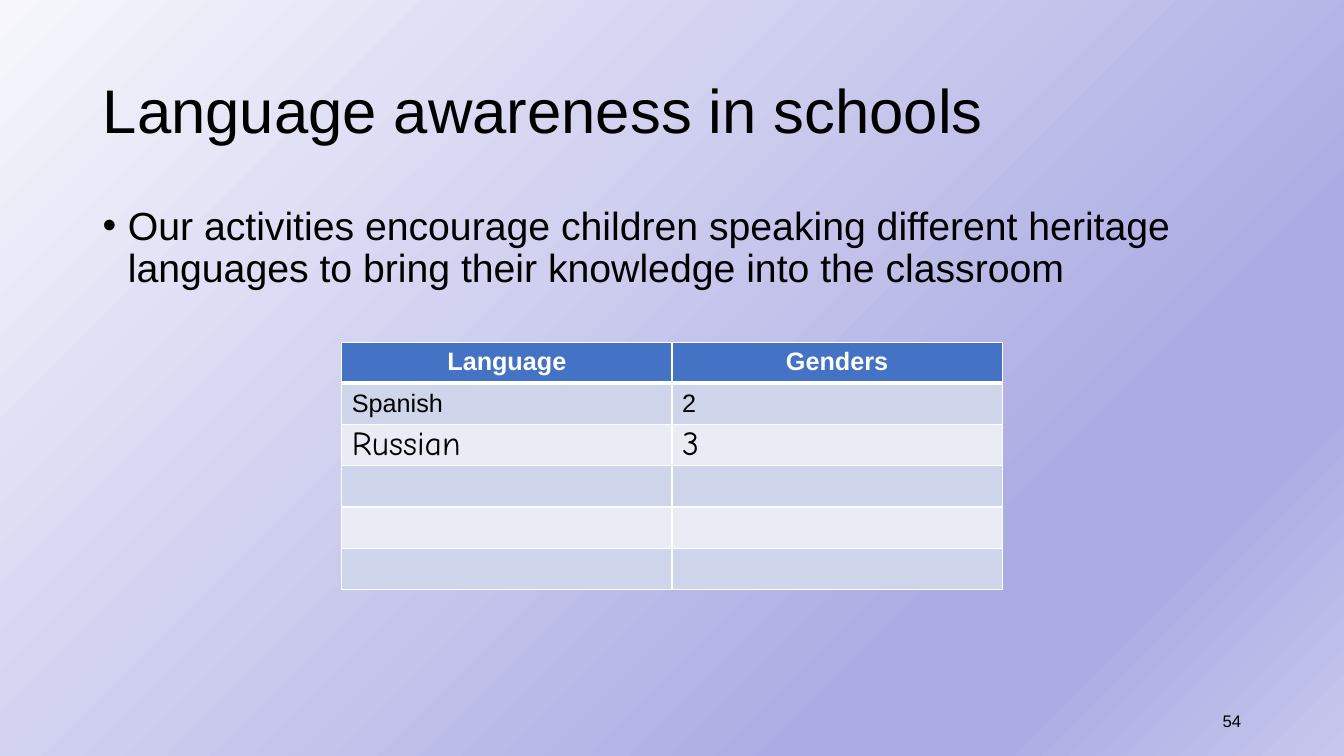
import lxml.etree
import pptx
import pptx.dml.color
import pptx.enum.text
import pptx.oxml.ns
import pptx.util

Inches, Pt = pptx.util.Inches, pptx.util.Pt
RGBColor = pptx.dml.color.RGBColor
Align, Anchor = pptx.enum.text.PP_ALIGN, pptx.enum.text.MSO_ANCHOR
qn = pptx.oxml.ns.qn

BLACK = RGBColor(0x00, 0x00, 0x00)
WHITE = RGBColor(0xFF, 0xFF, 0xFF)
HEADER_BLUE = RGBColor(0x44, 0x72, 0xC4)
BANDS = RGBColor(0xCF, 0xD5, 0xEA), RGBColor(0xE9, 0xEB, 0xF5)
GRADIENT = [(0, RGBColor(0xF6, 0xF6, 0xFC)), (74, RGBColor(0xAC, 0xAC, 0xE4)),
            (83, RGBColor(0xAC, 0xAC, 0xE4)), (100, RGBColor(0xC7, 0xC7, 0xED))]

WIDTH, HEIGHT = 13.33, 7.5
MARGIN = 0.92
CONTENT_WIDTH = WIDTH - 2 * MARGIN
HEADER_HEIGHT, ROW_HEIGHT = 0.38, 0.41

LANGUAGES = [("Language", "Genders"), ("Spanish", "2"), ("Russian", "3"),
             ("", ""), ("", ""), ("", "")]


def write(frame, text, size, para_format=None, **font_format):
    """Put one formatted paragraph into a text frame."""
    para = frame.paragraphs[0]
    for name, value in (para_format or {}).items():
        setattr(para, name, value)
    span = para.add_run()
    span.text = text
    span.font.color.rgb = font_format.pop("color", BLACK)
    for name, value in {"name": "Arial", "size": Pt(size), **font_format}.items():
        setattr(span.font, name, value)
    return para


def add_text_box(page, box, anchor):
    frame = page.shapes.add_textbox(*map(Inches, box)).text_frame
    frame.word_wrap = True
    frame.vertical_anchor = anchor
    return frame


def paint_background(page):
    fill = page.background.fill
    fill.gradient()
    fill.gradient_angle = 315
    stops = page.element.find(".//" + qn("a:gsLst"))
    stops.clear()
    for percent, color in GRADIENT:
        stop = lxml.etree.SubElement(stops, qn("a:gs"), pos=str(percent * 1000))
        lxml.etree.SubElement(stop, qn("a:srgbClr"), val=str(color))


def place_title(page, box):
    title = page.shapes.title
    for name, value in zip(("left", "top", "width", "height"), box):
        setattr(title, name, Inches(value))
    title.text_frame.word_wrap = True
    title.text_frame.vertical_anchor = Anchor.MIDDLE
    write(title.text_frame, "Language awareness in schools", 44,
          {"alignment": Align.LEFT, "line_spacing": 0.9})


def place_bullet(page, box):
    frame = add_text_box(page, box, Anchor.TOP)
    para = write(frame, "Our activities encourage children speaking different heritage "
                 "languages to bring their knowledge into the classroom", 28,
                 {"line_spacing": 0.9, "space_before": Pt(10)})
    # Hanging bullet
    properties = para._p.get_or_add_pPr()
    properties.set("marL", str(Inches(0.25)))
    properties.set("indent", str(-Inches(0.25)))
    lxml.etree.SubElement(properties, qn("a:buFont"), typeface="Arial")
    lxml.etree.SubElement(properties, qn("a:buChar"), char="•")


def place_page_number(page, box):
    frame = add_text_box(page, box, Anchor.MIDDLE)
    write(frame, "54", 12, {"alignment": Align.RIGHT})


def draw_borders(cell, top, bottom):
    properties = cell._tc.get_or_add_tcPr()
    for side, points in {"L": 1, "R": 1, "T": top, "B": bottom}.items():
        line = lxml.etree.SubElement(properties, qn("a:ln" + side), w=str(Pt(points)))
        fill = lxml.etree.SubElement(line, qn("a:solidFill"))
        lxml.etree.SubElement(fill, qn("a:srgbClr"), val=str(WHITE))


def style_cell(cell, row, text):
    draw_borders(cell, top=3 if row == 1 else 1, bottom=3 if row == 0 else 1)
    cell.fill.solid()
    cell.fill.fore_color.rgb = BANDS[(row - 1) % 2] if row else HEADER_BLUE
    if row == 0:
        write(cell.text_frame, text, 18, {"alignment": Align.CENTER}, bold=True, color=WHITE)
    elif text:
        cell.vertical_anchor = Anchor.MIDDLE
        cell.margin_top = cell.margin_bottom = 0
        size, font = (24, "Comic Neue") if row == 2 else (18, "Arial")
        write(cell.text_frame, text, size, name=font)


def place_language_table(page, box):
    table = page.shapes.add_table(len(LANGUAGES), 2, *map(Inches, box)).table
    table.first_row = table.horz_banding = False
    for row, texts in enumerate(LANGUAGES):
        table.rows[row].height = Inches(ROW_HEIGHT if row else HEADER_HEIGHT)
        for column, text in enumerate(texts):
            style_cell(table.cell(row, column), row, text)


def build_slide(deck):
    page = deck.slides.add_slide(deck.slide_layouts[5])
    paint_background(page)
    place_title(page, (MARGIN, 0.4, CONTENT_WIDTH, 1.45))
    place_bullet(page, (MARGIN, 2, CONTENT_WIDTH, 1.12))
    place_page_number(page, (WIDTH - MARGIN - 3, 6.95, 3, 0.4))
    table_width = 6.55
    table_height = HEADER_HEIGHT + (len(LANGUAGES) - 1) * ROW_HEIGHT
    place_language_table(page, ((WIDTH - table_width) / 2, 3.4, table_width, table_height))


def main():
    deck = pptx.Presentation()
    deck.slide_width, deck.slide_height = Inches(WIDTH), Inches(HEIGHT)
    build_slide(deck)
    deck.save("out.pptx")


if __name__ == "__main__":
    main()
